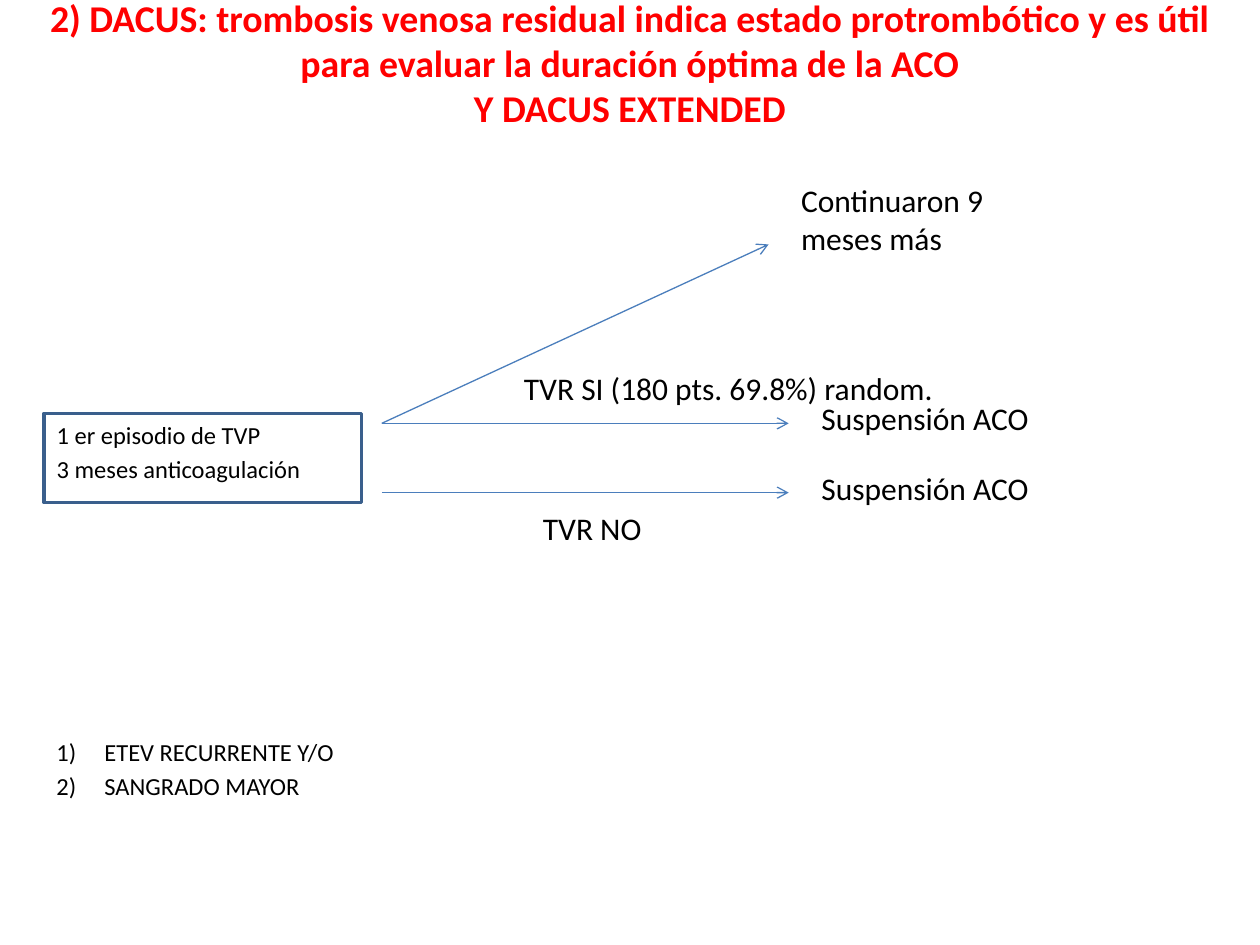
from lxml.etree import SubElement
from pptx import Presentation
from pptx.dml.color import RGBColor
from pptx.enum.shapes import MSO_CONNECTOR, MSO_SHAPE
from pptx.enum.text import MSO_ANCHOR, MSO_AUTO_SIZE, PP_ALIGN
from pptx.oxml.ns import qn
from pptx.util import Inches, Pt

BLACK, RED = "000000", "FF0000"
BOX_BLUE, ARROW_BLUE = "3A5F8C", "4B7EBC"
LIST_INDENT = 0.38


def color(hex_string):
    return RGBColor.from_string(hex_string)


def set_values(target, values):
    for name, value in values.items():
        setattr(target, name, value)


class SlideBuilder:
    """Holds the slide and the style shared by its elements."""

    font_name = "Calibri"

    def __init__(self, slide):
        self.slide = slide

    def place(self, shape, left, top, width, height):
        set_values(shape, {
            "left": Inches(left), "top": Inches(top),
            "width": Inches(width), "height": Inches(height),
        })

    def fill_text(self, shape, lines, size, text_color=BLACK, bold=False, **paragraph_format):
        frame = shape.text_frame
        set_values(frame, {"text": "\n".join(lines), "word_wrap": True,
                           "auto_size": MSO_AUTO_SIZE.NONE})
        for paragraph in frame.paragraphs:
            set_values(paragraph, paragraph_format)
            for run in paragraph.runs:
                set_values(run.font, {"name": self.font_name, "size": Pt(size), "bold": bold})
                run.font.color.rgb = color(text_color)

    def title(self, text, *box):
        shape = self.slide.shapes.title
        self.place(shape, *box)
        self.fill_text(shape, [text], 21.6, RED, True, alignment=PP_ALIGN.CENTER)
        shape.text_frame.vertical_anchor = MSO_ANCHOR.MIDDLE

    def fill_list(self, shape, lines, bullet, **bullet_values):
        self.fill_text(shape, lines, 14, space_before=Pt(2.8))
        for paragraph in shape.text_frame.paragraphs:
            properties = paragraph._p.get_or_add_pPr()
            properties.set("marL", str(Inches(LIST_INDENT)))
            properties.set("indent", str(-Inches(LIST_INDENT)))
            SubElement(properties, qn(bullet), bullet_values)

    def body(self, lines, *box):
        shape = self.slide.placeholders[1]
        self.place(shape, *box)
        self.fill_list(shape, lines, "a:buNone")

    def text_box(self, *box):
        return self.slide.shapes.add_textbox(*map(Inches, box))

    def numbered_list(self, lines, *box):
        self.fill_list(self.text_box(*box), lines, "a:buAutoNum", type="arabicParenR")

    def label(self, text, *box):
        self.fill_text(self.text_box(*box), [text], 18)

    def frame(self, *box):
        shape = self.slide.shapes.add_shape(MSO_SHAPE.RECTANGLE, *map(Inches, box))
        shape.shadow.inherit = False
        shape.fill.background()
        shape.line.color.rgb = color(BOX_BLUE)
        shape.line.width = Pt(2)

    def arrow(self, *ends):
        connector = self.slide.shapes.add_connector(MSO_CONNECTOR.STRAIGHT, *map(Inches, ends))
        connector.line.color.rgb = color(ARROW_BLUE)
        connector.line.width = Pt(0.75)
        properties = connector._element.spPr
        SubElement(properties.find(qn("a:ln")), qn("a:tailEnd"), type="arrow")
        SubElement(properties, qn("a:effectLst"))


def main():
    presentation = Presentation()
    presentation.slide_width, presentation.slide_height = Inches(10), Inches(7.5)
    builder = SlideBuilder(presentation.slides.add_slide(presentation.slide_layouts[1]))

    builder.title("2) DACUS: trombosis venosa residual indica estado protrombótico y es útil "
                  "para evaluar la duración óptima de la ACO\vY DACUS EXTENDED", 0, 0, 10, 0.99)
    builder.body(["1 er episodio de TVP", "3 meses anticoagulación"], 0.35, 3.28, 2.45, 0.55)
    builder.frame(0.35, 3.28, 2.52, 0.71)

    branch_left, residual_y, no_residual_y = 3.03, 3.36, 3.91
    for end_x, start_y, end_y in (
        (6.26, no_residual_y, no_residual_y),
        (6.26, residual_y, residual_y),
        (6.1, residual_y, 1.94),
    ):
        builder.arrow(branch_left, start_y, end_x, end_y)

    for text, left, top, width, height in (
        ("Continuaron 9 meses más", 6.26, 1.39, 2.2, 0.71),
        ("TVR SI (180 pts. 69.8%) random.", 4.06, 2.88, 3.94, 0.4),
        ("Suspensión ACO", 6.42, 3.12, 2.05, 0.4),
        ("Suspensión ACO", 6.42, 3.67, 2.05, 0.4),
        ("TVR NO", 4.21, 3.99, 1.02, 0.4),
    ):
        builder.label(text, left, top, width, height)

    builder.numbered_list(["ETEV RECURRENTE Y/O", "SANGRADO MAYOR"], 0.35, 5.8, 9, 0.9)
    presentation.save("out.pptx")


if __name__ == "__main__":
    main()
